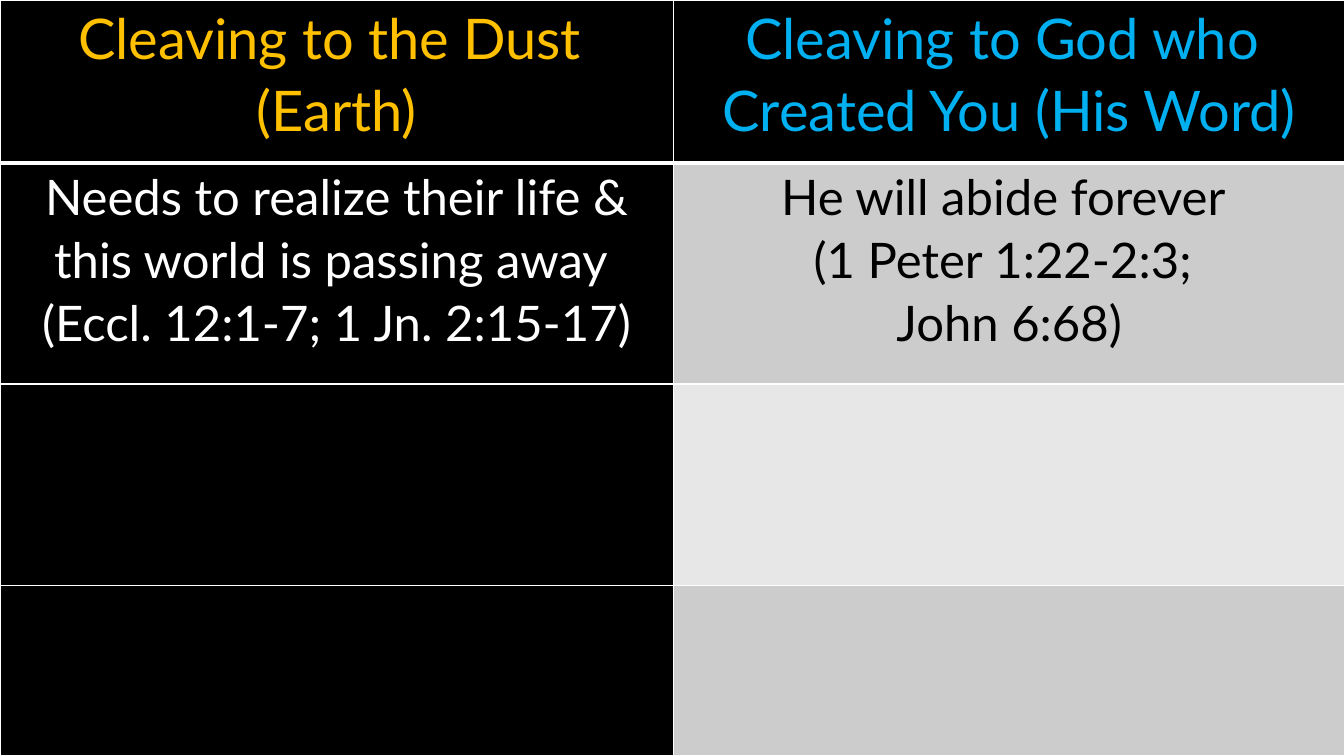
from lxml.etree import SubElement
from pptx import Presentation
from pptx.dml.color import RGBColor
from pptx.enum.text import PP_ALIGN
from pptx.oxml.ns import qn
from pptx.util import Inches, Pt

COLORS = {"black": "000000", "white": "FFFFFF", "gold": "FFC000",
          "sky": "00B0F0", "grey": "CCCCCC", "pale": "E7E7E7"}
COLUMN_WIDTHS = [6.68, 6.66]
ROW_HEIGHTS = [1.62, 2.19, 2, 1.69]
HEADER_SIZE, BODY_SIZE = 40, 35

# Each cell: paragraphs, text colour, fill
COMPARISON = [
    [(["Cleaving to the Dust ", "(Earth)"], "gold", "black"),
     (["Cleaving to God who ", "Created You (His Word)"], "sky", "black")],
    [(["Needs to realize their life & this world is passing away ",
       "(Eccl. 12:1-7; 1 Jn. 2:15-17)"], "white", "black"),
     (["He will abide forever ", "(1 Peter 1:22-2:3; ", "John 6:68)"], "black", "grey")],
    [([], "white", "black"), ([], "black", "pale")],
    [([], "white", "black"), ([], "black", "grey")],
]


class ComparisonSlide:
    """Holds the style and the current slide, and draws its table."""

    def __init__(self, slide, font="Lato", spacing=1.07):
        self.slide = slide
        self.font = font
        self.spacing = spacing
        background = slide.background.fill
        background.solid()
        background.fore_color.rgb = self.color("black")

    def color(self, name):
        return RGBColor.from_string(COLORS[name])

    def table(self, rows):
        table = self.slide.shapes.add_table(
            len(rows), len(COLUMN_WIDTHS), 0, 0,
            Inches(sum(COLUMN_WIDTHS)), Inches(sum(ROW_HEIGHTS))).table
        table.first_row = table.horz_banding = False
        for column, width in zip(table.columns, COLUMN_WIDTHS):
            column.width = Inches(width)
        for row, height in zip(table.rows, ROW_HEIGHTS):
            row.height = Inches(height)
        for r, row in enumerate(rows):
            for c, (lines, text_color, fill) in enumerate(row):
                cell = table.cell(r, c)
                self.borders(cell, top=3 if r == 1 else 1, bottom=3 if r == 0 else 1)
                cell.fill.solid()
                cell.fill.fore_color.rgb = self.color(fill)
                self.text(cell, lines, HEADER_SIZE if r == 0 else BODY_SIZE, text_color)

    def borders(self, cell, top, bottom):
        properties = cell._tc.get_or_add_tcPr()
        for side, width in (("L", 1), ("R", 1), ("T", top), ("B", bottom)):
            line = SubElement(properties, qn(f"a:ln{side}"), w=str(Pt(width)))
            fill = SubElement(line, qn("a:solidFill"))
            SubElement(fill, qn("a:srgbClr"), val=COLORS["white"])

    def text(self, cell, lines, size, color):
        cell.margin_left = cell.margin_right = Inches(0.07)
        cell.margin_top = cell.margin_bottom = 0
        frame = cell.text_frame
        for i, line in enumerate(lines):
            paragraph = frame.add_paragraph() if i else frame.paragraphs[0]
            paragraph.alignment = PP_ALIGN.CENTER
            paragraph.line_spacing = self.spacing
            run = paragraph.add_run()
            run.text = line
            run.font.name = self.font
            run.font.size = Pt(size)
            run.font.bold = False
            run.font.color.rgb = self.color(color)


def main():
    deck = Presentation()
    deck.slide_width, deck.slide_height = Inches(13.33), Inches(7.5)
    blank_layout = deck.slide_layouts[6]
    ComparisonSlide(deck.slides.add_slide(blank_layout)).table(COMPARISON)
    deck.save("out.pptx")


if __name__ == "__main__":
    main()
